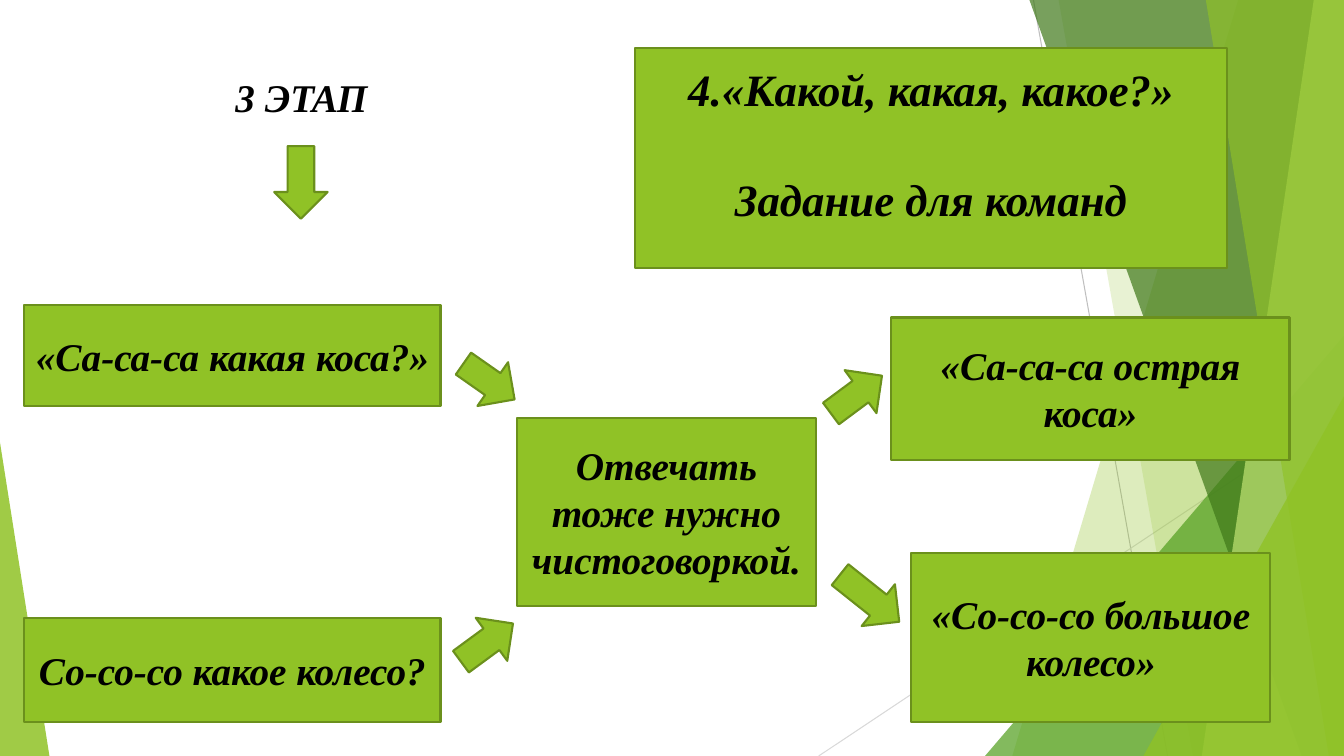
"""Builds the slide of stage 3 of a speech game for teams, with a green faceted backdrop."""
from dataclasses import dataclass

from lxml.etree import SubElement
from pptx import Presentation
from pptx.dml.color import RGBColor
from pptx.enum.shapes import MSO_CONNECTOR, MSO_SHAPE
from pptx.enum.text import MSO_ANCHOR, MSO_AUTO_SIZE, PP_ALIGN
from pptx.oxml.ns import qn
from pptx.util import Inches, Pt


@dataclass(frozen=True)
class Theme:
    font: str = "Times New Roman"
    title_size: int = 32
    body_size: int = 28
    title_gap: int = 40
    outline: float = 1.5
    hairline: float = 0.75
    ink: str = "000000"
    paper: str = "FFFFFF"
    green: str = "90C226"
    edge: str = "6B901C"
    forest: str = "3F7819"
    leaf: str = "54A021"
    lime: str = "C0E474"
    grey: str = "BFBFBF"
    light_grey: str = "D9D9D9"


THEME = Theme()
WIDTH, HEIGHT = 13.33, 7.5

TITLE = ["4.«Какой, какая, какое?»", "Задание для команд"]
TITLE_PLACE = (6.3, 0.48, 5.87, 2.18)
STAGE = ("3 ЭТАП", (1.51, 0.37, 2.96, 1.19))
CARDS = [
    ("«Со-со-со большое колесо»", (9.04, 5.49, 3.56, 1.67)),
    ("Со-со-со какое колесо?", (0.24, 6.13, 4.13, 1.03)),
    ("«Са-са-са острая коса»", (8.84, 3.15, 3.95, 1.41)),
    ("Отвечать тоже нужно чистоговоркой.", (5.13, 4.15, 2.96, 1.86)),
    ("«Са-са-са какая коса?»", (0.24, 3.03, 4.13, 1)),
]
STAGE_ARROW = (2.72, 1.45, 0.53, 0.72)
FLOW_ARROWS = [
    ((4.54, 3.52, 0.62, 0.53), 35),
    ((4.51, 6.11, 0.64, 0.53), 323.7),
    ((8.18, 3.65, 0.63, 0.53), 323.4),
    ((8.25, 5.67, 0.75, 0.53), 38.5),
]
RAYS = [
    ((10.25, 0, 11.58, HEIGHT), THEME.grey),
    ((WIDTH, 4.03, 8.12, HEIGHT), THEME.light_grey),
]
BAND, WEDGE = "band", "wedge"
FACETS = [
    (BAND, (12.28, 10.04), THEME.green, 30),
    (BAND, (10.5, 11.83), THEME.green, 20),
    (WEDGE, (9.77, 3.33, 3.56, 1), THEME.leaf, 72),
    (BAND, (10.21, 12.91), THEME.forest, 70),
    (BAND, (13.03, 11.92), THEME.lime, 70),
    (BAND, (11.96, 13.18), THEME.green, 65),
    (WEDGE, (11.34, 3.93, 1.99, 1), THEME.green, 80),
    (WEDGE, (0, 4.39, 0.49, 0), THEME.green, 85),
]


def paint(part, fill, edge):
    part.fill.solid()
    part.fill.fore_color.rgb = RGBColor.from_string(fill)
    part.line.color.rgb = RGBColor.from_string(edge)
    part.line.width = Pt(THEME.outline)


def add_part(shapes, preset, place):
    part = shapes.add_shape(preset, *map(Inches, place))
    part.shadow.inherit = False
    return part


def write(part, lines, size, gap=0):
    frame = part.text_frame
    frame.word_wrap = True
    frame.auto_size = MSO_AUTO_SIZE.NONE
    frame.vertical_anchor = MSO_ANCHOR.MIDDLE
    frame.text = "\n".join(lines)
    for index, paragraph in enumerate(frame.paragraphs):
        paragraph.alignment = PP_ALIGN.CENTER
        paragraph.space_before = Pt(gap if index else 0)
        font = paragraph.font
        font.name, font.size = THEME.font, Pt(size)
        font.bold = font.italic = True
        font.color.rgb = RGBColor.from_string(THEME.ink)


def add_ray(shapes, ends, color):
    ray = shapes.add_connector(MSO_CONNECTOR.STRAIGHT, *map(Inches, ends))
    ray.line.color.rgb = RGBColor.from_string(color)
    ray.line.width = Pt(THEME.hairline)
    SubElement(ray._element.spPr, qn("a:effectLst"))


def add_facet(shapes, kind, geometry, color, opacity):
    if kind == BAND:
        top, bottom = geometry
        corners = [(WIDTH, 0), (WIDTH, HEIGHT), (bottom, HEIGHT)]
        outline = shapes.build_freeform(Inches(top), 0)
        outline.add_line_segments([(Inches(x), Inches(y)) for x, y in corners])
        facet = outline.convert_to_shape()
        facet.shadow.inherit = False
    else:
        left, top, width, apex = geometry
        facet = add_part(shapes, MSO_SHAPE.ISOSCELES_TRIANGLE, (left, top, width, HEIGHT - top))
        facet.adjustments[0] = apex
    facet.fill.solid()
    facet.fill.fore_color.rgb = RGBColor.from_string(color)
    facet.line.fill.background()
    tint = facet._element.spPr.find(qn("a:solidFill")).find(qn("a:srgbClr"))
    SubElement(tint, qn("a:alpha"), val=str(opacity * 1000))


def add_title(shapes):
    title = shapes.title
    title.left, title.top, title.width, title.height = map(Inches, TITLE_PLACE)
    paint(title, THEME.green, THEME.edge)
    write(title, TITLE, THEME.title_size, THEME.title_gap)
    title.text_frame.margin_bottom = Inches(0.34)
    shapes._spTree.append(title._element)


def add_card(shapes, text, place, fill, edge):
    card = add_part(shapes, MSO_SHAPE.RECTANGLE, place)
    paint(card, fill, edge)
    write(card, [text], THEME.body_size)


def add_arrow(shapes, preset, place, angle=0):
    arrow = add_part(shapes, preset, place)
    arrow.rotation = angle
    paint(arrow, THEME.green, THEME.edge)


def main():
    deck = Presentation()
    deck.slide_width, deck.slide_height = Inches(WIDTH), Inches(HEIGHT)
    shapes = deck.slides.add_slide(deck.slide_layouts[5]).shapes
    for ends, color in RAYS:
        add_ray(shapes, ends, color)
    for facet in FACETS:
        add_facet(shapes, *facet)
    add_title(shapes)
    add_card(shapes, *STAGE, THEME.paper, THEME.paper)
    add_arrow(shapes, MSO_SHAPE.DOWN_ARROW, STAGE_ARROW)
    for text, place in CARDS:
        add_card(shapes, text, place, THEME.green, THEME.edge)
    for place, angle in FLOW_ARROWS:
        add_arrow(shapes, MSO_SHAPE.RIGHT_ARROW, place, angle)
    deck.save("out.pptx")


if __name__ == "__main__":
    main()
